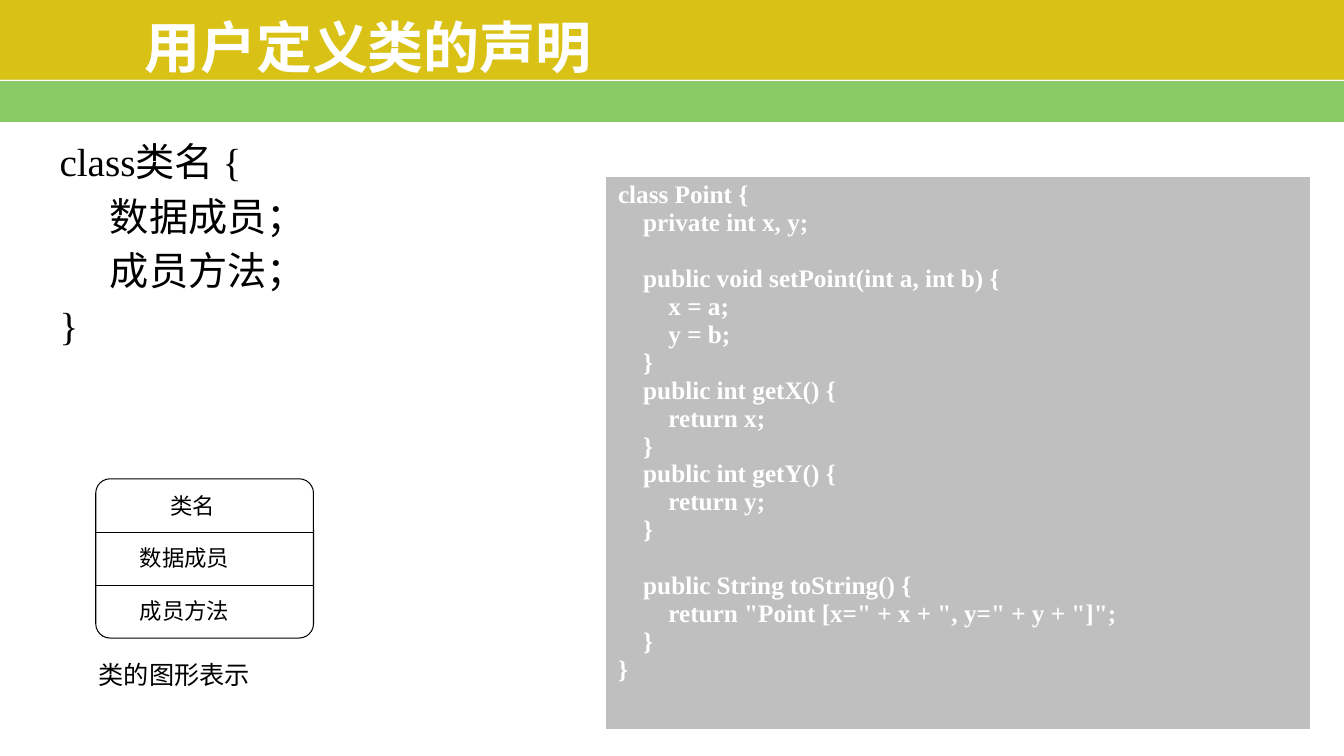
from dataclasses import dataclass

from lxml.etree import SubElement
from pptx import Presentation
from pptx.dml.color import RGBColor
from pptx.enum.shapes import MSO_CONNECTOR, MSO_SHAPE
from pptx.enum.text import MSO_ANCHOR, MSO_AUTO_SIZE, PP_ALIGN
from pptx.oxml.ns import qn
from pptx.util import Emu, Pt

PX = 9144  # one px is a hundredth of an inch
COLORS = {
    "gold": "D9C215",
    "green": "89CA64",
    "white": "FFFFFF",
    "black": "000000",
    "grey": "BFBFBF",
}
CHINESE_FONT = "Noto Sans CJK SC"
LATIN_FONT = "Times New Roman"

SYNTAX_LINES = ["class类名 {", "\t数据成员；", "\t成员方法；", "}"]
POINT_CODE = """class Point {
    private int x, y;

    public void setPoint(int a, int b) {
        x = a;
        y = b;
    }
    public int getX() {
        return x;
    }
    public int getY() {
        return y;
    }

    public String toString() {
        return "Point [x=" + x + ", y=" + y + "]";
    }
}"""


@dataclass(frozen=True)
class Box:
    left: int
    top: int
    width: int
    height: int

    def emu(self) -> list[Emu]:
        return [Emu(v * PX) for v in (self.left, self.top, self.width, self.height)]


@dataclass(frozen=True)
class TextStyle:
    size: int
    color: str
    font: str = CHINESE_FONT
    bold: bool = False


@dataclass(frozen=True)
class Label:
    text: str
    box: Box
    size: int


SLIDE = Box(0, 0, 1333, 750)
BANDS = [(Box(0, 79, 1333, 42), "green"), (Box(0, 0, 1333, 79), "gold")]
TITLE_BOX = Box(133, 19, 1033, 53)
SYNTAX_BOX = Box(49, 132, 1244, 571)
CODE_BOX = Box(600, 175, 700, 550)
CLASS_BOX = Box(95, 475, 216, 158)
CLASS_ROW = 53
CLASS_LABELS = [
    Label("类名", Box(159, 483, 65, 37), 16),
    Label("数据成员", Box(129, 535, 110, 37), 16),
    Label("成员方法", Box(129, 587, 110, 37), 16),
]
CAPTION = Label("类的图形表示", Box(88, 649, 172, 40), 18)


def rgb(name: str) -> RGBColor:
    return RGBColor.from_string(COLORS[name])


def add_text(paragraph, text: str, style: TextStyle) -> None:
    run = paragraph.add_run()
    run.text = text
    run.font.size = Pt(style.size)
    run.font.bold = style.bold
    run.font.name = style.font
    run.font.color.rgb = rgb(style.color)
    SubElement(run.font._element, qn("a:ea")).set("typeface", CHINESE_FONT)


def add_filled(shapes, kind, box: Box, fill: str, line: str | None = None):
    shape = shapes.add_shape(kind, *box.emu())
    shape.shadow.inherit = False
    shape.fill.solid()
    shape.fill.fore_color.rgb = rgb(fill)
    if line:
        shape.line.color.rgb = rgb(line)
        shape.line.width = Pt(0.75)
    else:
        shape.line.fill.background()
    return shape


def add_horizontal_line(shapes, left: int, right: int, y: int, color: str, width: float) -> None:
    line = shapes.add_connector(
        MSO_CONNECTOR.STRAIGHT, Emu(left * PX), Emu(y * PX), Emu(right * PX), Emu(y * PX)
    )
    line.line.color.rgb = rgb(color)
    line.line.width = Pt(width)
    SubElement(line._element.spPr, qn("a:effectLst"))


def add_label(shapes, label: Label) -> None:
    frame = shapes.add_textbox(*label.box.emu()).text_frame
    frame.word_wrap = False
    frame.auto_size = MSO_AUTO_SIZE.SHAPE_TO_FIT_TEXT
    add_text(frame.paragraphs[0], label.text, TextStyle(label.size, "black"))


def place(shape, box: Box) -> None:
    shape.left, shape.top, shape.width, shape.height = box.emu()
    shape.text_frame.auto_size = MSO_AUTO_SIZE.NONE
    shape.text_frame.word_wrap = True


def draw_header(slide) -> None:
    for box, color in BANDS:
        add_filled(slide.shapes, MSO_SHAPE.RECTANGLE, box, color)
    add_horizontal_line(slide.shapes, 0, SLIDE.width, 80, "white", 1)

    title = slide.shapes.title
    title._element.getparent().append(title._element)  # in front of the bands
    place(title, TITLE_BOX)
    title.text_frame.vertical_anchor = MSO_ANCHOR.MIDDLE
    paragraph = title.text_frame.paragraphs[0]
    paragraph.alignment = PP_ALIGN.LEFT
    add_text(paragraph, "用户定义类的声明", TextStyle(40, "white", bold=True))


def draw_syntax(slide) -> None:
    body = slide.placeholders[1]
    body._element.getparent().append(body._element)
    place(body, SYNTAX_BOX)
    frame = body.text_frame
    for index, text in enumerate(SYNTAX_LINES):
        paragraph = frame.add_paragraph() if index else frame.paragraphs[0]
        properties = paragraph._p.get_or_add_pPr()
        properties.set("marL", "0")
        properties.set("indent", "0")
        SubElement(properties, qn("a:buNone"))
        tab = SubElement(SubElement(properties, qn("a:tabLst")), qn("a:tab"))
        tab.set("pos", str(100 * PX))
        tab.set("algn", "l")
        paragraph.line_spacing = Pt(33)
        paragraph.space_before = Pt(6 if index else 0)
        add_text(paragraph, text, TextStyle(28, "black", LATIN_FONT))


def draw_code(slide) -> None:
    table = slide.shapes.add_table(1, 1, *CODE_BOX.emu()).table
    table.first_row = table.horz_banding = False
    cell = table.cell(0, 0)
    cell.margin_left = cell.margin_right = Emu(13 * PX)
    cell.margin_top = cell.margin_bottom = Emu(5 * PX)

    properties = cell._tc.get_or_add_tcPr()
    for side, width in (("L", 1), ("R", 1), ("T", 1), ("B", 3)):
        border = SubElement(properties, qn(f"a:ln{side}"), w=str(Pt(width)))
        fill = SubElement(border, qn("a:solidFill"))
        SubElement(fill, qn("a:srgbClr"), val=COLORS["white"])
    cell.fill.solid()
    cell.fill.fore_color.rgb = rgb("grey")

    style = TextStyle(18, "white", LATIN_FONT, bold=True)
    for index, text in enumerate(POINT_CODE.splitlines()):
        frame = cell.text_frame
        paragraph = frame.add_paragraph() if index else frame.paragraphs[0]
        if text:
            add_text(paragraph, text, style)
        else:
            end = SubElement(paragraph._p, qn("a:endParaRPr"), sz=str(style.size * 100))
            SubElement(end, qn("a:latin"), typeface=style.font)


def draw_class_diagram(slide) -> None:
    shapes = slide.shapes.add_group_shape().shapes
    outline = add_filled(shapes, MSO_SHAPE.ROUNDED_RECTANGLE, CLASS_BOX, "white", "black")
    outline.adjustments[0] = 0.09
    right = CLASS_BOX.left + CLASS_BOX.width
    for row in (1, 2):
        y = CLASS_BOX.top + row * CLASS_ROW
        add_horizontal_line(shapes, CLASS_BOX.left, right, y, "black", 0.75)
    for label in CLASS_LABELS:
        add_label(shapes, label)


def main() -> None:
    presentation = Presentation()
    presentation.slide_width, presentation.slide_height = SLIDE.emu()[2:]
    slide = presentation.slides.add_slide(presentation.slide_layouts[1])
    draw_header(slide)
    draw_syntax(slide)
    add_label(slide.shapes, CAPTION)
    draw_code(slide)
    draw_class_diagram(slide)
    presentation.save("out.pptx")


if __name__ == "__main__":
    main()
